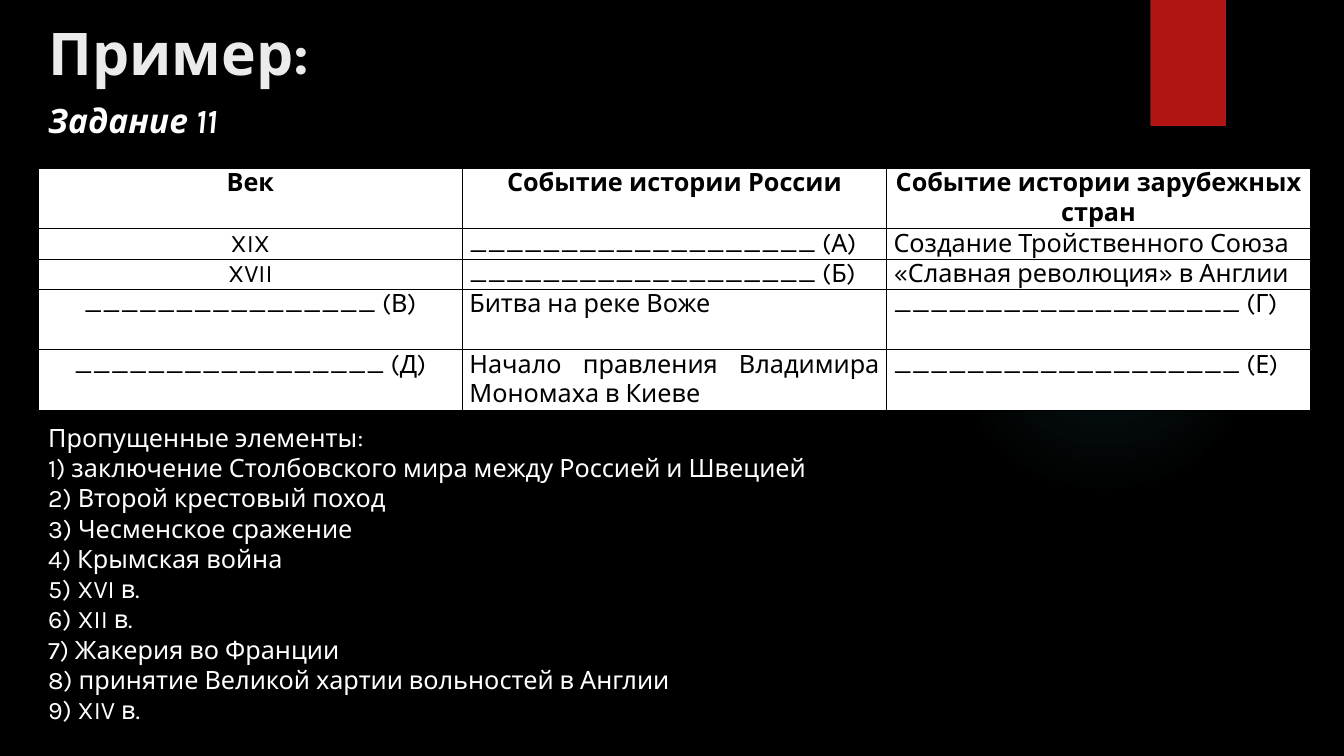
from lxml.etree import SubElement
from pptx import Presentation
from pptx.dml.color import RGBColor
from pptx.enum.shapes import MSO_SHAPE
from pptx.enum.text import MSO_ANCHOR, PP_ALIGN
from pptx.oxml.ns import qn
from pptx.util import Inches, Pt

LEFT, WIDE = 0.38, 12.62
LINE = 0.3  # height of one 18 pt line

deck = Presentation()
deck.slide_width, deck.slide_height = Inches(13.33), Inches(7.5)
slide = deck.slides.add_slide(deck.slide_layouts[6])


def paint(fill, tone):
    fill.solid()
    fill.fore_color.rgb = RGBColor.from_string(tone)


def style(frame, size, tone, bold=False, italic=False, align=PP_ALIGN.LEFT):
    """Format every run in a text frame."""
    frame.word_wrap = True
    for para in frame.paragraphs:
        para.alignment = align
        for run in para.runs:
            font = run.font
            font.name, font.size = "Karla", Pt(size)
            font.bold, font.italic = bold, italic
            font.color.rgb = RGBColor.from_string(tone)


paint(slide.background.fill, "000000")

# Soft glow and red tab
glow = slide.shapes.add_shape(
    MSO_SHAPE.OVAL, Inches(9.41), Inches(1.83), Inches(3.08), Inches(3.08))
tab = slide.shapes.add_shape(
    MSO_SHAPE.RECTANGLE, Inches(11.41), 0, Inches(0.75), Inches(1.25))
for shape in (glow, tab):
    shape.shadow.inherit = False
    shape.line.fill.background()
paint(tab.fill, "B01513")

glow.fill.gradient()
grad = glow.fill._xPr.find(qn("a:gradFill"))
for part in list(grad):
    grad.remove(part)
stops = SubElement(grad, qn("a:gsLst"))
for pos, alpha in ((0, 7), (36, 6), (69, 0)):
    stop = SubElement(stops, qn("a:gs"), pos=str(pos * 1000))
    tint = SubElement(stop, qn("a:srgbClr"), val="50B9C1")
    SubElement(tint, qn("a:alpha"), val=str(alpha * 1000))
ring = SubElement(grad, qn("a:path"), path="circle")
SubElement(ring, qn("a:fillToRect"), l="50000", t="50000", r="50000", b="50000")

# Title, task and list of answers
items = """Пропущенные элементы:
1) заключение Столбовского мира между Россией и Швецией
2) Второй крестовый поход
3) Чесменское сражение
4) Крымская война
5) XVI в.
6) XII в.
7) Жакерия во Франции
8) принятие Великой хартии вольностей в Англии
9) XIV в."""
texts = (
    ("Пример:", 0.11, 0.82, 42, "EBEBEB", True, False),
    ("Задание 11", 0.94, 0.5, 24, "FFFFFF", True, True),
    (items, 4.14, 3.16, 18, "FFFFFF", False, False),
)
for text, top, high, size, tone, bold, italic in texts:
    box = slide.shapes.add_textbox(
        Inches(LEFT), Inches(top), Inches(WIDE), Inches(high))
    box.text_frame.text = text
    style(box.text_frame, size, tone, bold, italic)
    if size == 42:
        box.text_frame.vertical_anchor = MSO_ANCHOR.MIDDLE

# Table of centuries and events
gap = "_" * 19
rows = (
    (2, "Век", "Событие истории России", "Событие истории зарубежных стран"),
    (1, "XIX", gap + " (А)", "Создание Тройственного Союза"),
    (1, "XVII", gap + " (Б)", "«Славная революция» в Англии"),
    (2, "_" * 16 + " (В)", "Битва на реке Воже", gap + " (Г)"),
    (2, "_" * 17 + " (Д)", "Начало правления Владимира Мономаха в Киеве", gap + " (Е)"),
)
table = slide.shapes.add_table(
    len(rows), 3, Inches(LEFT), Inches(1.67), Inches(WIDE), Inches(8 * LINE)).table
table.horz_banding = table.first_row = False
for col in table.columns:
    col.width = Inches(WIDE / 3)
for r, (lines, *words) in enumerate(rows):
    table.rows[r].height = Inches(lines * LINE)
    for c, word in enumerate(words):
        cell = table.cell(r, c)
        cell.margin_left = cell.margin_right = Inches(0.07)
        cell.margin_top = cell.margin_bottom = 0
        cell.text_frame.text = word
        mid = r == 0 or c == 0
        style(cell.text_frame, 18, "000000", bold=r == 0,
              align=PP_ALIGN.CENTER if mid else PP_ALIGN.JUSTIFY)
        props = cell._tc.get_or_add_tcPr()
        for side in ("lnL", "lnR", "lnT", "lnB"):
            edge = SubElement(props, qn("a:" + side), w=str(Pt(1)))
            ink = SubElement(edge, qn("a:solidFill"))
            SubElement(ink, qn("a:srgbClr"), val="000000")
        paint(cell.fill, "FFFFFF")

deck.save("out.pptx")
